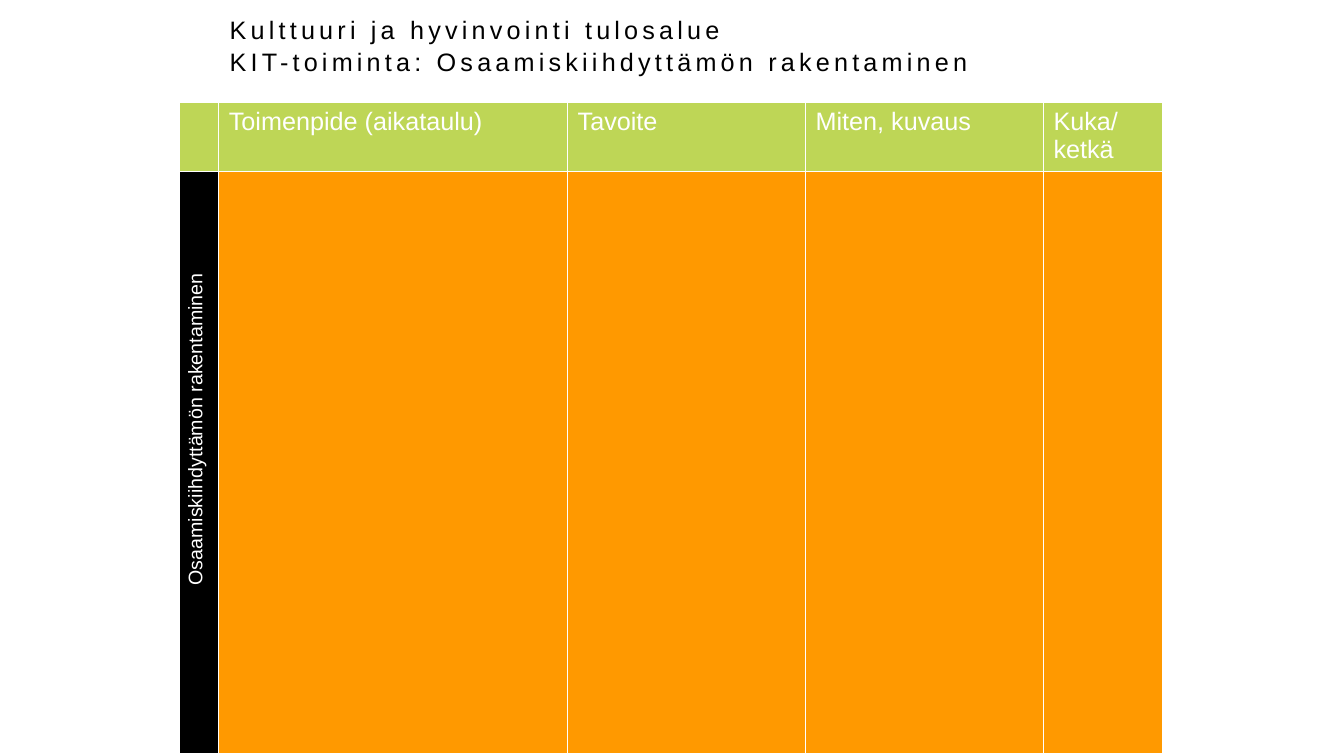
from dataclasses import dataclass

from lxml.etree import SubElement
from pptx import Presentation
from pptx.dml.color import RGBColor
from pptx.enum.text import MSO_ANCHOR, MSO_AUTO_SIZE
from pptx.oxml.ns import qn
from pptx.util import Inches, Pt


@dataclass(frozen=True)
class Theme:
    font: str = "Arial"
    text: str = "000000"
    light: str = "FFFFFF"
    header: str = "BED656"
    body: str = "FF9900"
    side: str = "000000"
    large: int = 18
    small: int = 14
    border: int = 1


THEME = Theme()
TITLE = "Kulttuuri ja hyvinvointi tulosalue\vKIT-toiminta: Osaamiskiihdyttämön rakentaminen"
HEADERS = ["", "Toimenpide (aikataulu)", "Tavoite", "Miten, kuvaus", "Kuka/\nketkä"]
SIDE_LABEL = "Osaamiskiihdyttämön rakentaminen"
COLUMNS = [0.39, 3.46, 2.36, 2.36, 1.18]
ROWS = [0.68, 5.78]


def write_text(frame, text, size=THEME.large, color=THEME.light,
               tracking=0, line_spacing=None, indent=0):
    """Line feeds start paragraphs; vertical tabs break lines."""
    frame.text = text
    for paragraph in frame.paragraphs:
        if line_spacing:
            paragraph.line_spacing = line_spacing
        if indent:
            paragraph._p.get_or_add_pPr().set("marL", str(Inches(indent)))
        for run in paragraph.runs:
            run.font.name = THEME.font
            run.font.size = Pt(size)
            run.font.color.rgb = RGBColor.from_string(color)
            if tracking:
                run.font._element.set("spc", str(tracking * 100))


def style_cell(cell, fill):
    """Borders come before the fill in the cell properties."""
    properties = cell._tc.get_or_add_tcPr()
    for side in ("a:lnL", "a:lnR", "a:lnT", "a:lnB"):
        line = SubElement(properties, qn(side), w=str(Pt(THEME.border)))
        SubElement(SubElement(line, qn("a:solidFill")), qn("a:srgbClr"), val=THEME.light)
    cell.fill.solid()
    cell.fill.fore_color.rgb = RGBColor.from_string(fill)


def add_title(slide, left, top, width, height):
    box = slide.shapes.add_textbox(*map(Inches, (left, top, width, height)))
    frame = box.text_frame
    frame.word_wrap = True
    frame.auto_size = MSO_AUTO_SIZE.NONE
    frame.vertical_anchor = MSO_ANCHOR.MIDDLE
    write_text(frame, TITLE, color=THEME.text, tracking=3, line_spacing=1.07)


def add_plan_table(slide, left, top):
    size = (sum(COLUMNS), sum(ROWS))
    table = slide.shapes.add_table(
        len(ROWS), len(COLUMNS), *map(Inches, (left, top, *size))).table
    table.horz_banding = False
    table.first_row = False
    for column, width in zip(table.columns, COLUMNS):
        column.width = Inches(width)
    for row, height in zip(table.rows, ROWS):
        row.height = Inches(height)

    for index, header in enumerate(HEADERS):
        header_cell, body_cell = table.cell(0, index), table.cell(1, index)
        style_cell(header_cell, THEME.header)
        style_cell(body_cell, THEME.body if index else THEME.side)
        write_text(header_cell.text_frame, header)

    side_cell = table.cell(1, 0)
    side_cell._tc.get_or_add_tcPr().set("vert", "vert270")
    write_text(side_cell.text_frame, SIDE_LABEL, size=THEME.small, indent=1.57)


def main():
    presentation = Presentation()
    presentation.slide_width = Inches(13.33)
    presentation.slide_height = Inches(7.5)
    slide = presentation.slides.add_slide(presentation.slide_layouts[6])
    add_title(slide, 2.18, 0.29, 9, 0.3)
    add_plan_table(slide, 1.78, 1.02)
    presentation.save("out.pptx")


if __name__ == "__main__":
    main()
